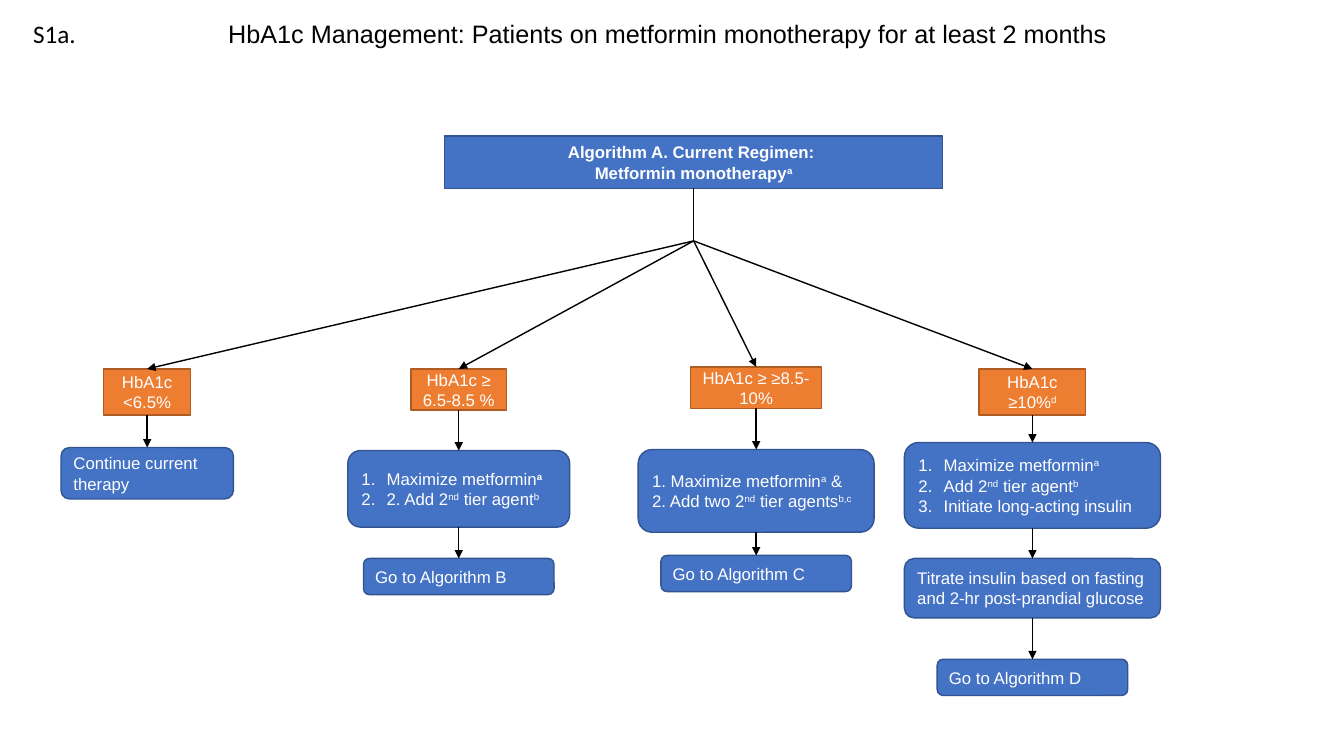
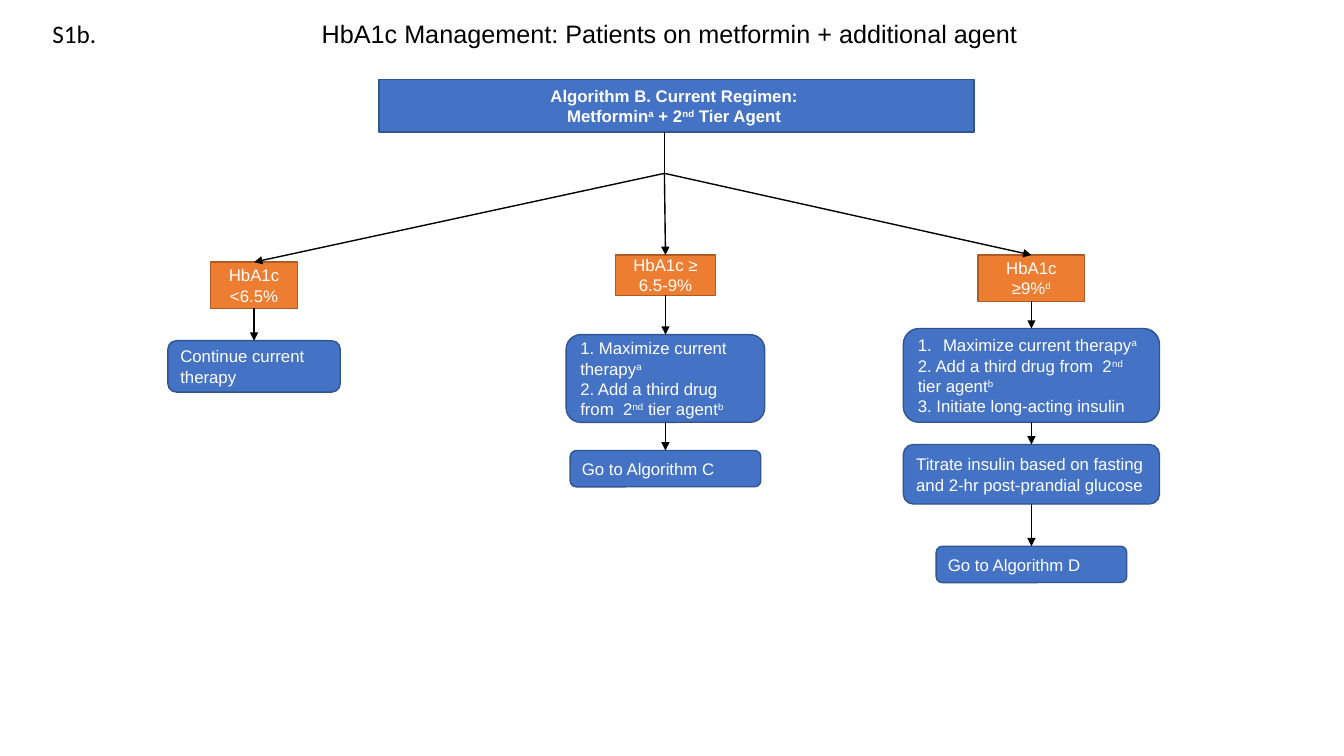
from collections import namedtuple
from dataclasses import dataclass

from lxml import etree
from pptx import Presentation
from pptx.dml.color import RGBColor
from pptx.enum.shapes import MSO_CONNECTOR, MSO_SHAPE
from pptx.enum.text import MSO_ANCHOR, PP_ALIGN
from pptx.oxml.ns import qn
from pptx.util import Emu, Pt

RECT, ROUNDED = MSO_SHAPE.RECTANGLE, MSO_SHAPE.ROUNDED_RECTANGLE
STRAIGHT = MSO_CONNECTOR.STRAIGHT
LEFT, CENTER = PP_ALIGN.LEFT, PP_ALIGN.CENTER
MIDDLE = MSO_ANCHOR.MIDDLE
EMU_PER_PX = 9144
TOP, BOTTOM = 0, 2


@dataclass(frozen=True)
class Theme:
    """Colours, fonts and sizes shared by the slides."""
    blue: str = "4472C4"
    blue_edge: str = "325491"
    orange: str = "ED7D31"
    orange_edge: str = "AF5C24"
    white: str = "FFFFFF"
    black: str = "000000"
    font: str = "Arial"
    label_font: str = "Calibri"
    title_size: int = 18
    box_size: int = 12
    line_width: int = 1
    list_indent: int = 25


THEME = Theme()

Style = namedtuple("Style", "shape fill edge align bold")
HEADER = Style(RECT, THEME.blue, THEME.blue_edge, CENTER, True)
RANGE = Style(RECT, THEME.orange, THEME.orange_edge, CENTER, False)
ACTION = Style(ROUNDED, THEME.blue, THEME.blue_edge, LEFT, False)

Step = namedtuple("Step", "style top width height lines")
Column = namedtuple("Column", "center steps")
Chart = namedtuple("Chart", "label label_left title title_left title_width header_center header fork columns")


def under_six(top):
    """Return the two steps for a value below 6.5%."""
    return [Step(RANGE, top, 86, 46, ["HbA1c <6.5%"]),
            Step(ACTION, top + 78, 171, 51, ["Continue current therapy"])]


def go_to(letter, top):
    """Return the step that leads to another algorithm."""
    return Step(ACTION, top, 189, 36, [f"Go to Algorithm {letter}"])


def titrate(top):
    """Return the insulin titration step."""
    return Step(ACTION, top, 254, 59,
                ["Titrate insulin based on fasting and 2-hr post-prandial glucose"])


CHARTS = [
    Chart(
        "S1a.", 23,
        "HbA1c Management: Patients on metformin monotherapy for at least 2 months", 212, 900,
        688, Step(HEADER, 135, 494, 52,
                  ["Algorithm A. Current Regimen: ", "Metformin monotherapy^a^"]),
        (688, 239),
        [
            Column(146, under_six(366)),
            Column(455, [
                Step(RANGE, 366, 95, 41, ["HbA1c ≥ 6.5-8.5 %"]),
                Step(ACTION, 447, 220, 76,
                     ["#Maximize metformin^*a^", "#2. Add 2^nd^ tier agent^b^"]),
                go_to("B", 554),
            ]),
            Column(750, [
                Step(RANGE, 364, 130, 41, ["HbA1c ≥ ≥8.5-10%"]),
                Step(ACTION, 446, 234, 82,
                     ["1. Maximize metformin^a^ &", "2. Add two 2^nd^ tier agents^b,c^"]),
                go_to("C", 551),
            ]),
            Column(1024, [
                Step(RANGE, 366, 106, 46, ["HbA1c ≥10%^d^"]),
                Step(ACTION, 439, 254, 85,
                     ["#Maximize metformin^a^", "#Add 2^nd^ tier agent^b^",
                      "#Initiate long-acting insulin"]),
                titrate(554),
                go_to("D", 654),
            ]),
        ]),
    Chart(
        "S1b.", 42,
        "HbA1c Management: Patients on metformin + additional agent", 305, 718,
        671, Step(HEADER, 79, 590, 52,
                  ["Algorithm B. Current Regimen: ", "Metformin^a^ + 2^nd^ Tier Agent "]),
        (659, 172),
        [
            Column(252, under_six(260)),
            Column(660, [
                Step(RANGE, 253, 99, 40, ["HbA1c ≥ 6.5-9%"]),
                Step(ACTION, 332, 197, 87,
                     ["1. Maximize current therapy^a^",
                      "2. Add a third drug from  2^nd^ tier agent^b^"]),
                go_to("C", 447),
            ]),
            Column(1023, [
                Step(RANGE, 253, 106, 46, ["HbA1c ≥9%^d^"]),
                Step(ACTION, 326, 254, 93,
                     ["#Maximize current therapy^a^",
                      "2. Add a third drug from  2^nd^ tier agent^b^",
                      "3. Initiate long-acting insulin"]),
                titrate(441),
                go_to("D", 542),
            ]),
        ]),
]


def px(length):
    """Turn px into EMU."""
    return Emu(round(length * EMU_PER_PX))


def set_font(font, name, size, color, bold=False):
    """Set the face, size, colour and weight of a font."""
    font.name, font.size, font.bold = name, Pt(size), bold
    font.color.rgb = RGBColor.from_string(color)


def add_number(para):
    """Give a paragraph an automatic number and a hanging indent."""
    properties = para._p.get_or_add_pPr()
    indent = px(THEME.list_indent)
    properties.set("marL", str(indent))
    properties.set("indent", str(-indent))
    etree.SubElement(properties, qn("a:buFont"), typeface="+mj-lt")
    etree.SubElement(properties, qn("a:buAutoNum"), type="arabicPeriod")


def write_line(para, line, style):
    """Write a line where # numbers it, ^...^ raises text and ^*...^ also bolds it."""
    para.alignment = style.align
    if line.startswith("#"):
        add_number(para)
    set_font(para.font, THEME.font, THEME.box_size, THEME.white, style.bold)
    for index, part in enumerate(line.removeprefix("#").split("^")):
        if not part:
            continue
        span = para.add_run()
        span.text = part.removeprefix("*")
        if part.startswith("*"):
            span.font.bold = True
        if index % 2:
            span._r.get_or_add_rPr().set("baseline", "30000")


def add_step(page, center, step):
    """Add a box centred on a column and return it."""
    style = step.style
    box = page.shapes.add_shape(style.shape, px(center - step.width / 2), px(step.top),
                                px(step.width), px(step.height))
    box.shadow.inherit = False
    box.fill.solid()
    box.fill.fore_color.rgb = RGBColor.from_string(style.fill)
    box.line.color.rgb = RGBColor.from_string(style.edge)
    box.line.width = Pt(THEME.line_width)
    frame = box.text_frame
    frame.word_wrap = True
    frame.vertical_anchor = MIDDLE
    for index, line in enumerate(step.lines):
        para = frame.add_paragraph() if index else frame.paragraphs[0]
        write_line(para, line, style)
    return box


def add_line(page, start, end, source=None, target=None, arrow=True):
    """Add a line between points, joined to the boxes that are given."""
    line = page.shapes.add_connector(STRAIGHT, *map(px, start + end))
    if source is not None:
        line.begin_connect(source, BOTTOM)
    if target is not None:
        line.end_connect(target, TOP)
    line.line.color.rgb = RGBColor.from_string(THEME.black)
    line.line.width = Pt(THEME.line_width)
    properties = line._element.spPr
    if arrow:
        etree.SubElement(properties.find(qn("a:ln")), qn("a:tailEnd"), type="triangle")
    etree.SubElement(properties, qn("a:effectLst"))


def add_heading(page, left, width, text, font, align, wrap):
    """Add a line of text along the top of the slide."""
    box = page.shapes.add_textbox(px(left), px(13), px(width), px(40))
    box.text_frame.word_wrap = wrap
    para = box.text_frame.paragraphs[0]
    para.text = text
    para.alignment = align
    set_font(para.font, font, THEME.title_size, THEME.black)


def add_column(page, column, fork):
    """Add a column of boxes with arrows leading down from the fork."""
    start, previous = fork, None
    for step in column.steps:
        box = add_step(page, column.center, step)
        add_line(page, start, (column.center, step.top), previous, box)
        start, previous = (column.center, step.top + step.height), box


def add_chart_page(deck, chart):
    """Add a slide with one decision tree."""
    page = deck.slides.add_slide(deck.slide_layouts[6])
    add_heading(page, chart.label_left, 79, chart.label, THEME.label_font, LEFT, True)
    add_heading(page, chart.title_left, chart.title_width, chart.title, THEME.font, CENTER, False)
    header = add_step(page, chart.header_center, chart.header)
    fork_x = chart.fork[0]
    source = header if fork_x == chart.header_center else None
    trunk_top = (fork_x, chart.header.top + chart.header.height)
    add_line(page, trunk_top, chart.fork, source, arrow=False)
    for column in chart.columns:
        add_column(page, column, chart.fork)


def main():
    """Build and save the deck."""
    deck = Presentation()
    deck.slide_width, deck.slide_height = px(1333), px(750)
    for chart in CHARTS:
        add_chart_page(deck, chart)
    deck.save("out.pptx")


if __name__ == "__main__":
    main()
